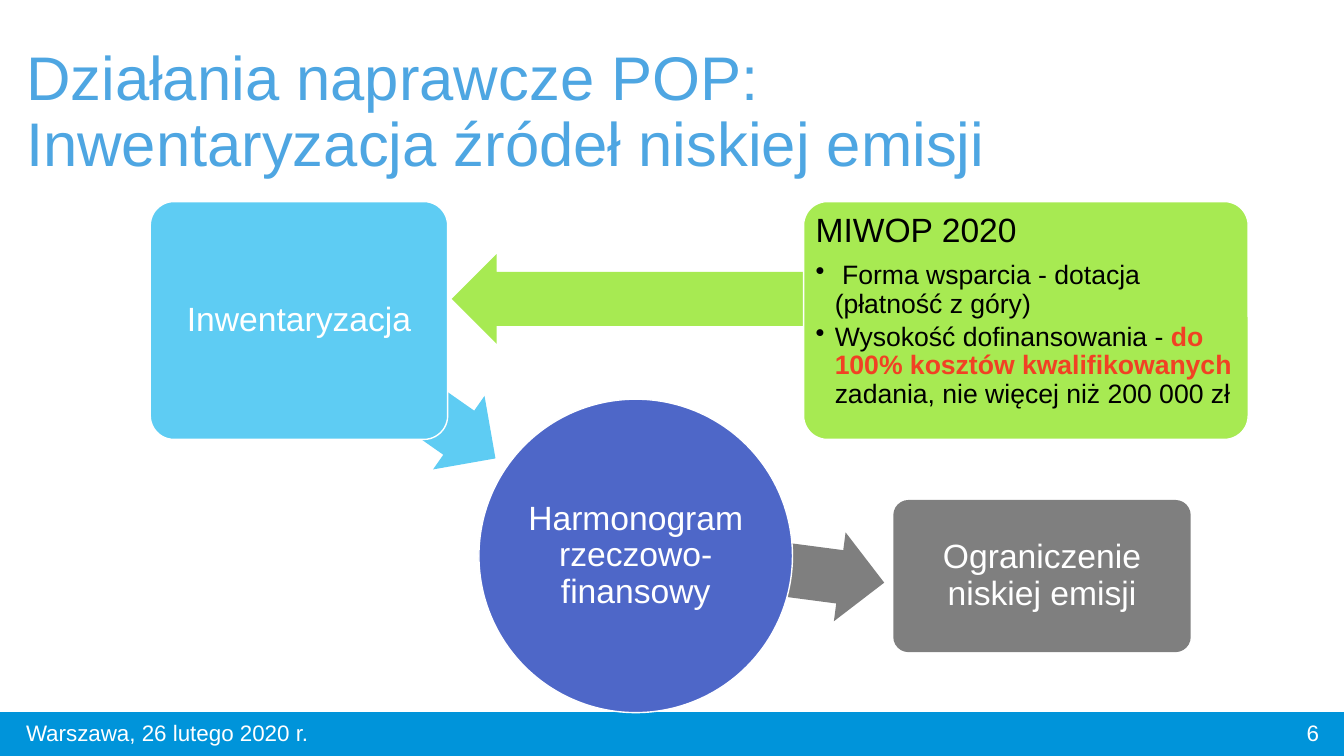
from dataclasses import dataclass

from lxml import etree
from pptx import Presentation
from pptx.dml.color import RGBColor
from pptx.enum.shapes import MSO_SHAPE
from pptx.enum.text import MSO_ANCHOR, PP_ALIGN
from pptx.oxml.ns import qn
from pptx.shapes.autoshape import Shape
from pptx.slide import Slide
from pptx.text.text import TextFrame
from pptx.util import Inches, Pt

RECTANGLE = MSO_SHAPE.RECTANGLE
ROUNDED = MSO_SHAPE.ROUNDED_RECTANGLE
OVAL = MSO_SHAPE.OVAL
LEFT_ARROW = MSO_SHAPE.LEFT_ARROW
TOP, MIDDLE = MSO_ANCHOR.TOP, MSO_ANCHOR.MIDDLE
LEFT, CENTER, RIGHT = PP_ALIGN.LEFT, PP_ALIGN.CENTER, PP_ALIGN.RIGHT


@dataclass(frozen=True)
class Theme:
    font: str = "Arial"
    title_size: int = 44
    node_size: int = 24
    bullet_size: int = 19
    footer_size: int = 16
    title: str = "4EA6E2"
    footer: str = "0094DA"
    indigo: str = "4E67C8"
    sky: str = "5ECCF3"
    lime: str = "A7EA52"
    accent: str = "F14124"
    white: str = "FFFFFF"
    black: str = "000000"


THEME = Theme()


@dataclass(frozen=True)
class Box:
    left: float
    top: float
    width: float
    height: float


@dataclass(frozen=True)
class Figure:
    kind: MSO_SHAPE
    box: Box
    fill: str
    line: str | None = None
    opacity: int = 100
    adjustments: tuple[float, ...] = ()
    rotation: float = 0
    text: str = ""
    inset: float = 0.05


@dataclass(frozen=True)
class Label:
    box: Box
    text: str
    size: int
    color: str
    alignment: PP_ALIGN = LEFT
    spacing: float = 1.0


@dataclass(frozen=True)
class Piece:
    text: str
    color: str = THEME.black
    bold: bool = False


ARROW = (0.6, 0.5)
CORNER = (0.1,)
BAR = Figure(RECTANGLE, Box(0, 7.07, 13.33, 0.43), THEME.footer, THEME.footer)
SUPPORT = Figure(ROUNDED, Box(7.97, 2, 4.41, 2.36), THEME.lime, THEME.white, adjustments=CORNER)
FLOW = (
    Figure(LEFT_ARROW, Box(6.4, 5.18, 2.38, 0.89), THEME.black, opacity=50,
           adjustments=ARROW, rotation=187.5),
    Figure(OVAL, Box(4.75, 3.96, 3.11, 3.11), THEME.indigo, THEME.white,
           text="Harmonogram rzeczowo-finansowy", inset=0.02),
    Figure(LEFT_ARROW, Box(2.75, 3.42, 2.38, 0.89), THEME.sky,
           adjustments=ARROW, rotation=215),
    Figure(ROUNDED, Box(1.49, 2, 2.95, 2.36), THEME.sky, THEME.white,
           adjustments=CORNER, text="Inwentaryzacja"),
    Figure(LEFT_ARROW, Box(4.48, 2.52, 3.73, 0.89), THEME.lime, adjustments=ARROW),
    Figure(ROUNDED, Box(8.86, 4.96, 2.95, 1.51), THEME.black, opacity=50,
           adjustments=CORNER, text="Ograniczenie niskiej emisji"),
)
LABELS = (
    Label(Box(0.16, 0.4, 10.02, 1.45),
          "Działania naprawcze POP:\vInwentaryzacja źródeł niskiej emisji",
          THEME.title_size, THEME.title, spacing=0.9),
    Label(Box(0.16, 7.07, 4, 0.4), "Warszawa, 26 lutego 2020 r.",
          THEME.footer_size, THEME.white),
    Label(Box(10.18, 7.07, 3, 0.4), "6", THEME.footer_size, THEME.white, RIGHT),
)
BULLETS = (
    (Piece(" Forma wsparcia - dotacja (płatność z góry)"),),
    (
        Piece("Wysokość dofinansowania - "),
        Piece("do 100% kosztów kwalifikowanych ", THEME.accent, True),
        Piece("zadania, nie więcej niż 200 000 zł"),
    ),
)


def place(box: Box) -> tuple[int, int, int, int]:
    return Inches(box.left), Inches(box.top), Inches(box.width), Inches(box.height)


def write(frame: TextFrame, text: str, size: int, color: str, alignment: PP_ALIGN,
          spacing: float) -> None:
    paragraph = frame.paragraphs[0]
    paragraph.text = text
    paragraph.alignment = alignment
    paragraph.line_spacing = spacing
    paragraph.font.name = THEME.font
    paragraph.font.size = Pt(size)
    paragraph.font.color.rgb = RGBColor.from_string(color)


def set_frame(frame: TextFrame, anchor: MSO_ANCHOR, inset: float) -> None:
    frame.word_wrap = True
    frame.vertical_anchor = anchor
    frame.margin_left = frame.margin_right = Inches(inset)
    frame.margin_top = frame.margin_bottom = Inches(inset)


def draw_figure(slide: Slide, figure: Figure) -> Shape:
    shape = slide.shapes.add_shape(figure.kind, *place(figure.box))
    shape.shadow.inherit = False
    shape.rotation = figure.rotation
    for index, value in enumerate(figure.adjustments):
        shape.adjustments[index] = value
    shape.fill.solid()
    shape.fill.fore_color.rgb = RGBColor.from_string(figure.fill)
    if figure.opacity < 100:
        color = shape.fill._xPr.find(qn("a:solidFill"))[0]
        etree.SubElement(color, qn("a:alpha"), val=str(figure.opacity * 1000))
    if figure.line:
        shape.line.color.rgb = RGBColor.from_string(figure.line)
        shape.line.width = Pt(1)
    else:
        shape.line.fill.background()
    if figure.text:
        set_frame(shape.text_frame, MIDDLE, figure.inset)
        write(shape.text_frame, figure.text, THEME.node_size, THEME.white, CENTER, 0.9)
    return shape


def draw_label(slide: Slide, label: Label) -> None:
    frame = slide.shapes.add_textbox(*place(label.box)).text_frame
    set_frame(frame, MIDDLE, 0.05)
    frame.margin_left = frame.margin_right = Inches(0.1)
    write(frame, label.text, label.size, label.color, label.alignment, label.spacing)


def add_bullet(frame: TextFrame, pieces: tuple[Piece, ...]) -> None:
    paragraph = frame.add_paragraph()
    paragraph.level = 1
    paragraph.alignment = LEFT
    paragraph.line_spacing = 0.9
    paragraph.space_after = Pt(3)
    properties = paragraph._p.get_or_add_pPr()
    properties.set("marL", str(Inches(0.19)))
    properties.set("indent", str(Inches(-0.19)))
    etree.SubElement(properties, qn("a:buChar"), char="•")
    paragraph.font.name = THEME.font
    paragraph.font.size = Pt(THEME.bullet_size)
    for piece in pieces:
        run = paragraph.add_run()
        run.text = piece.text
        run.font.bold = piece.bold
        run.font.color.rgb = RGBColor.from_string(piece.color)


def draw_support(slide: Slide) -> None:
    frame = draw_figure(slide, SUPPORT).text_frame
    set_frame(frame, TOP, SUPPORT.inset)
    write(frame, "MIWOP 2020", THEME.node_size, THEME.black, LEFT, 0.9)
    frame.paragraphs[0].space_after = Pt(8.4)
    for pieces in BULLETS:
        add_bullet(frame, pieces)


def main() -> None:
    presentation = Presentation()
    presentation.slide_width = Inches(13.33)
    presentation.slide_height = Inches(7.5)
    slide = presentation.slides.add_slide(presentation.slide_layouts[6])
    draw_figure(slide, BAR)
    for figure in FLOW:
        draw_figure(slide, figure)
    draw_support(slide)
    for label in LABELS:
        draw_label(slide, label)
    presentation.save("out.pptx")


if __name__ == "__main__":
    main()
